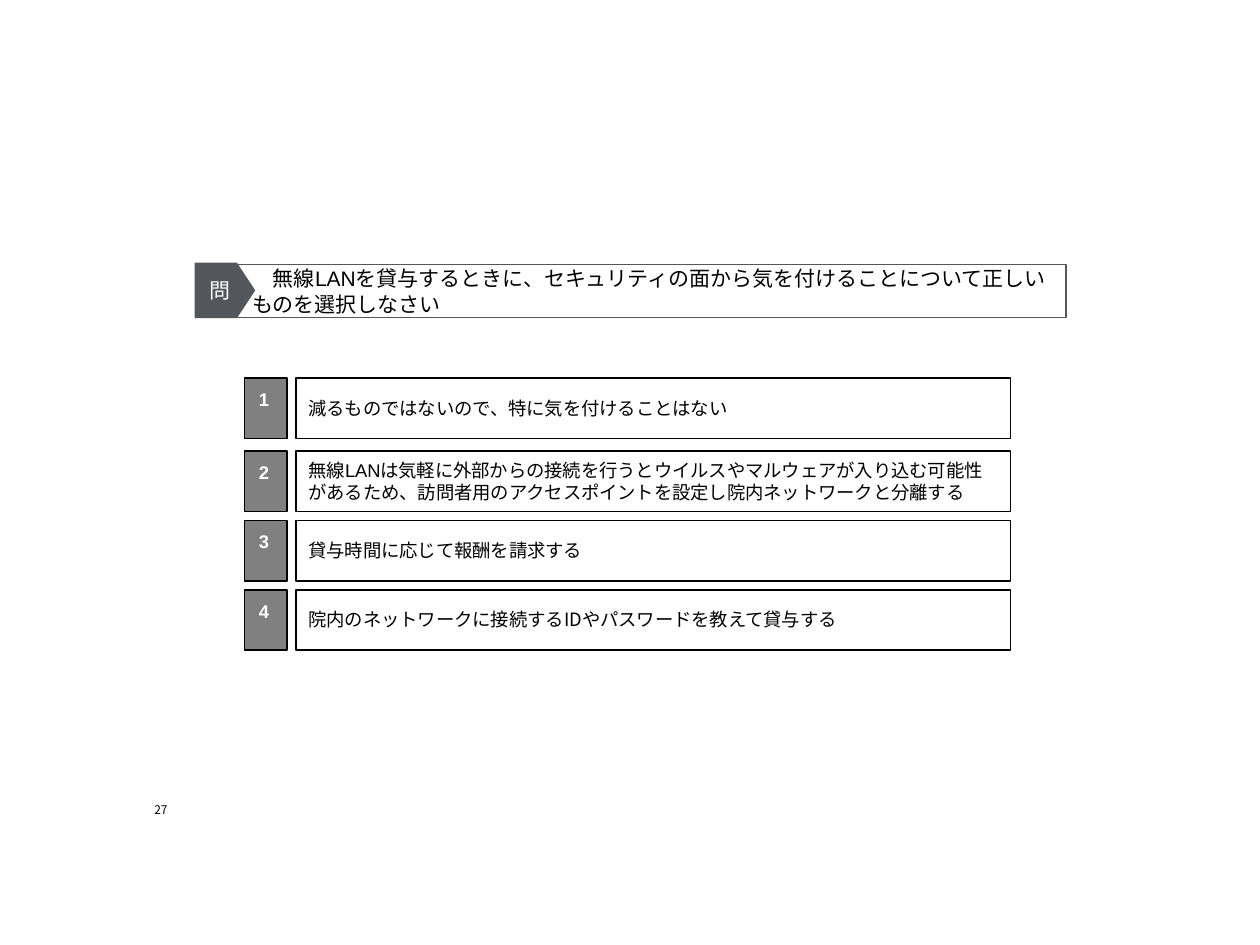
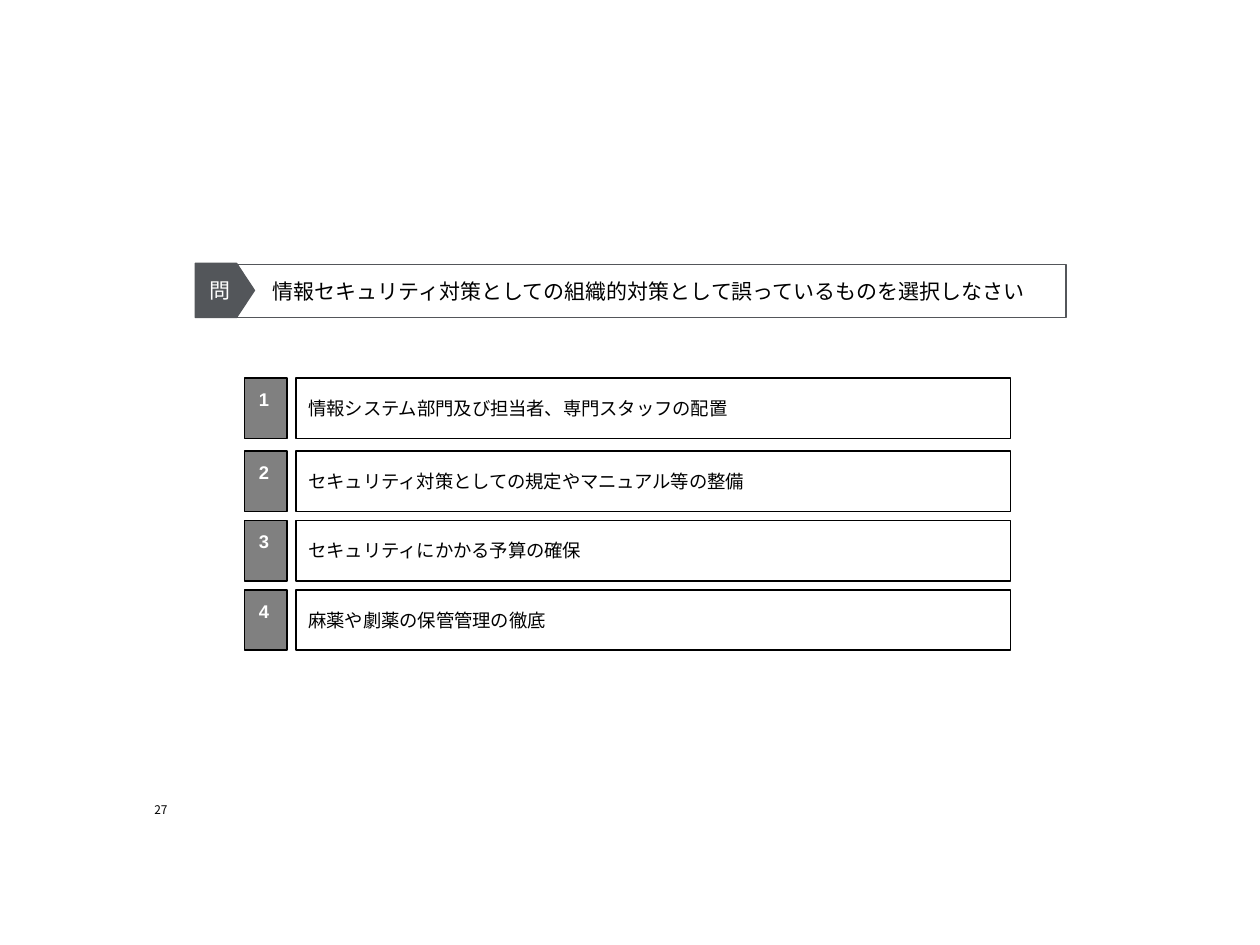
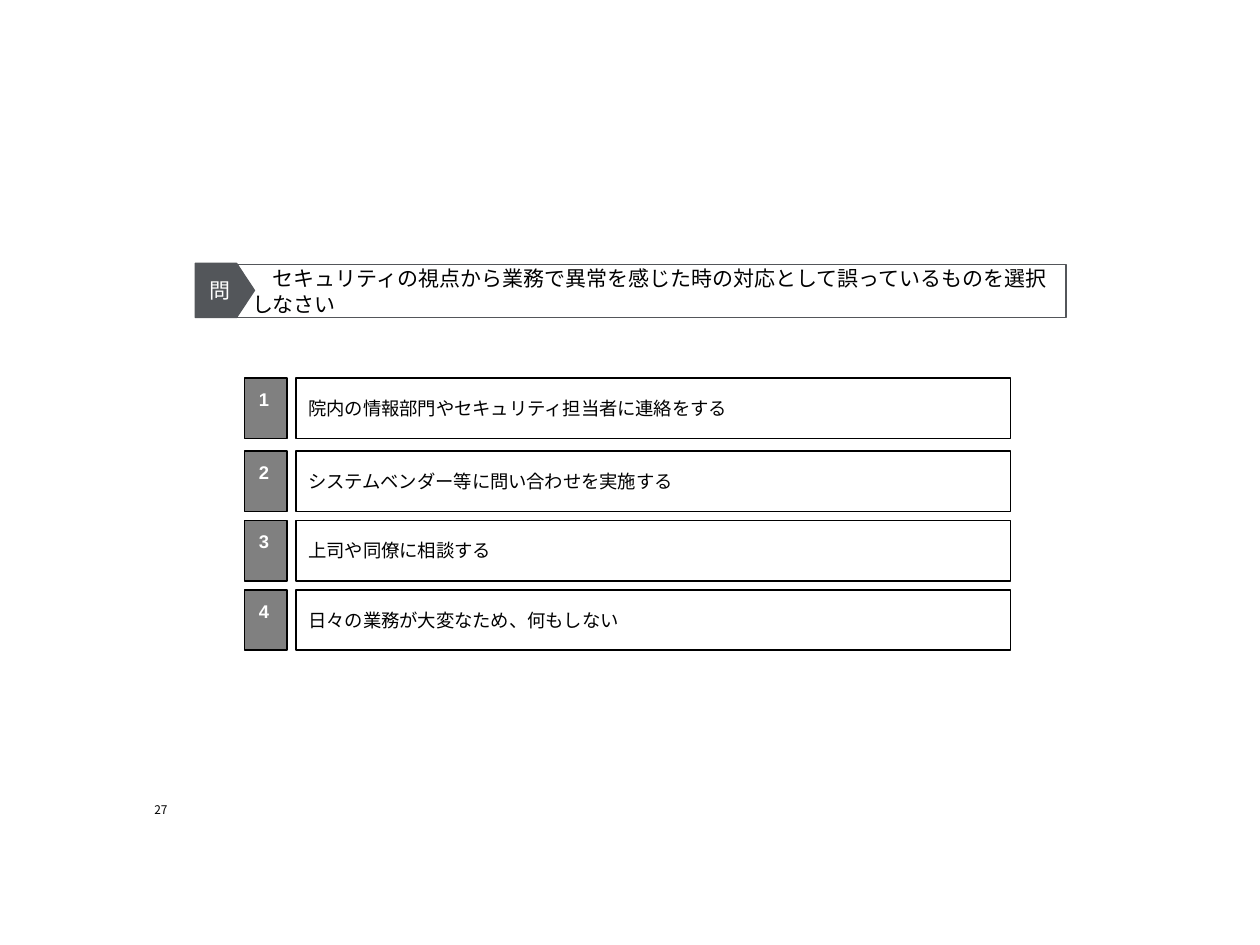
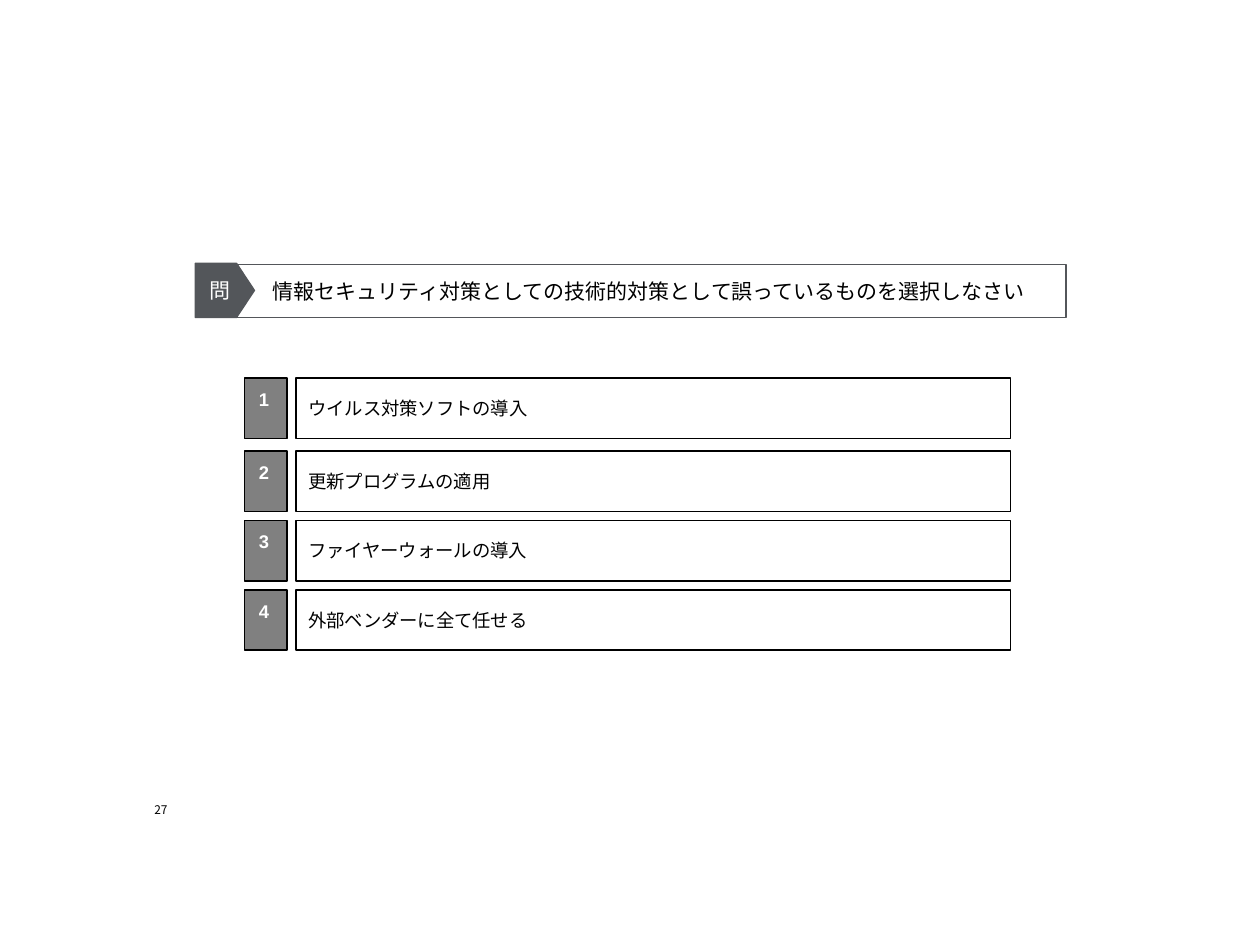
from dataclasses import dataclass

from lxml.etree import SubElement
from pptx import Presentation
from pptx.dml.color import RGBColor
from pptx.enum.lang import MSO_LANGUAGE_ID
from pptx.enum.shapes import MSO_SHAPE
from pptx.enum.text import MSO_ANCHOR, MSO_AUTO_SIZE, PP_ALIGN
from pptx.oxml.ns import qn
from pptx.util import Inches, Pt


@dataclass(frozen=True)
class Theme:
    latin: str = "Arial"
    gothic: str = "Noto Sans CJK JP"
    black: RGBColor = RGBColor(0x00, 0x00, 0x00)
    white: RGBColor = RGBColor(0xFF, 0xFF, 0xFF)
    slate: RGBColor = RGBColor(0x53, 0x56, 0x5A)
    gray: RGBColor = RGBColor(0x80, 0x80, 0x80)
    question_size: float = 12
    answer_size: float = 10.5
    page_size: float = 6.8


PAGE_NUMBER = "27"
ROW_TOPS = (3.0, 3.58, 4.13, 4.68)
ROW_HEIGHT = 0.48

QUESTIONS = [
    ("無線LANを貸与するときに、セキュリティの面から気を付けることについて正しいものを選択しなさい",
     ["減るものではないので、特に気を付けることはない",
      "無線LANは気軽に外部からの接続を行うとウイルスやマルウェアが入り込む可能性があるため、"
      "訪問者用のアクセスポイントを設定し院内ネットワークと分離する",
      "貸与時間に応じて報酬を請求する",
      "院内のネットワークに接続するIDやパスワードを教えて貸与する"]),
    ("情報セキュリティ対策としての組織的対策として誤っているものを選択しなさい",
     ["情報システム部門及び担当者、専門スタッフの配置",
      "セキュリティ対策としての規定やマニュアル等の整備",
      "セキュリティにかかる予算の確保",
      "麻薬や劇薬の保管管理の徹底"]),
    ("セキュリティの視点から業務で異常を感じた時の対応として誤っているものを選択しなさい",
     ["院内の情報部門やセキュリティ担当者に連絡をする",
      "システムベンダー等に問い合わせを実施する",
      "上司や同僚に相談する",
      "日々の業務が大変なため、何もしない"]),
    ("情報セキュリティ対策としての技術的対策として誤っているものを選択しなさい",
     ["ウイルス対策ソフトの導入",
      "更新プログラムの適用",
      "ファイヤーウォールの導入",
      "外部ベンダーに全て任せる"]),
]


class QuizDeck:
    def __init__(self, theme):
        self.theme = theme
        self.prs = Presentation()
        self.prs.slide_width, self.prs.slide_height = Inches(10), Inches(7.5)
        self.s = None

    def new_slide(self):
        self.s = self.prs.slides.add_slide(self.prs.slide_layouts[5])

    # Shared formatting
    def set_text(self, sp, text, size, color, font=None, bold=False, align=PP_ALIGN.LEFT,
                 anchor=MSO_ANCHOR.MIDDLE, insets=(0.1, 0.05, 0.1, 0.05), wrap=True):
        tf = sp.text_frame
        tf.auto_size = MSO_AUTO_SIZE.NONE
        tf.word_wrap = wrap
        tf.vertical_anchor = anchor
        tf.margin_left, tf.margin_top, tf.margin_right, tf.margin_bottom = map(Inches, insets)
        p = tf.paragraphs[0]
        p.alignment = align
        r = p.add_run()
        r.text = text
        r.font.name = font or self.theme.latin
        r.font.size = Pt(size)
        r.font.bold = bold
        r.font.color.rgb = color
        r.font.language_id = MSO_LANGUAGE_ID.JAPANESE
        # East Asian characters take the same typeface
        SubElement(r._r.get_or_add_rPr(), qn("a:ea")).set("typeface", r.font.name)
        return p

    def paint(self, sp, line, width=1, fill=None):
        if fill is None:
            sp.fill.background()
        else:
            sp.fill.solid()
            sp.fill.fore_color.rgb = fill
        sp.line.color.rgb = line
        sp.line.width = Pt(width)

    def shape(self, kind, left, top, width, height, line, line_width=1, fill=None):
        sp = self.s.shapes.add_shape(kind, Inches(left), Inches(top), Inches(width), Inches(height))
        sp.shadow.inherit = False
        self.paint(sp, line, line_width, fill)
        return sp

    # Slide elements
    def question(self, text):
        t = self.theme
        sp = self.s.shapes.title
        sp.left, sp.top, sp.width, sp.height = map(Inches, (1.79, 2.1, 6.67, 0.42))
        self.paint(sp, t.slate, fill=t.white)
        p = self.set_text(sp, text, t.question_size, t.black, insets=(0.21, 0.03, 0.03, 0.03))
        # First line starts one character in, clear of the tag
        p._p.get_or_add_pPr().set("indent", str(Pt(t.question_size)))

    def question_tag(self):
        t = self.theme
        sp = self.shape(MSO_SHAPE.PENTAGON, 1.55, 2.09, 0.47, 0.43, t.slate, 0.75, t.slate)
        sp.adjustments[0] = 0.33
        self.set_text(sp, "問", t.question_size, t.white, t.gothic,
                      align=PP_ALIGN.CENTER, wrap=False)

    def answer(self, number, text, top, gothic=False):
        t = self.theme
        sp = self.shape(MSO_SHAPE.RECTANGLE, 2.35, top, 5.67, ROW_HEIGHT, t.black)
        p = self.set_text(sp, text, t.answer_size, t.black, t.gothic if gothic else t.latin)
        if gothic:
            p.line_spacing = Pt(11.2)
        sp = self.shape(MSO_SHAPE.RECTANGLE, 1.94, top, 0.34, ROW_HEIGHT, t.black, fill=t.gray)
        self.set_text(sp, str(number), t.answer_size, t.white, bold=True, align=PP_ALIGN.CENTER,
                      anchor=MSO_ANCHOR.TOP, insets=(0.1, 0.08, 0.13, 0.05))

    def page_number(self):
        t = self.theme
        sp = self.s.shapes.add_textbox(Inches(1.18), Inches(6.34), Inches(0.15), Inches(0.14))
        self.set_text(sp, PAGE_NUMBER, t.page_size, t.black, t.gothic, align=PP_ALIGN.RIGHT,
                      anchor=MSO_ANCHOR.BOTTOM, insets=(0, 0, 0, 0), wrap=False)


def main():
    deck = QuizDeck(Theme())
    for question, answers in QUESTIONS:
        deck.new_slide()
        deck.page_number()
        deck.question(question)
        deck.question_tag()
        for number, (text, top) in enumerate(zip(answers, ROW_TOPS), start=1):
            # The answer naming IDs is set fully in the gothic face
            deck.answer(number, text, top, gothic="ID" in text)
    deck.prs.save("out.pptx")


if __name__ == "__main__":
    main()
